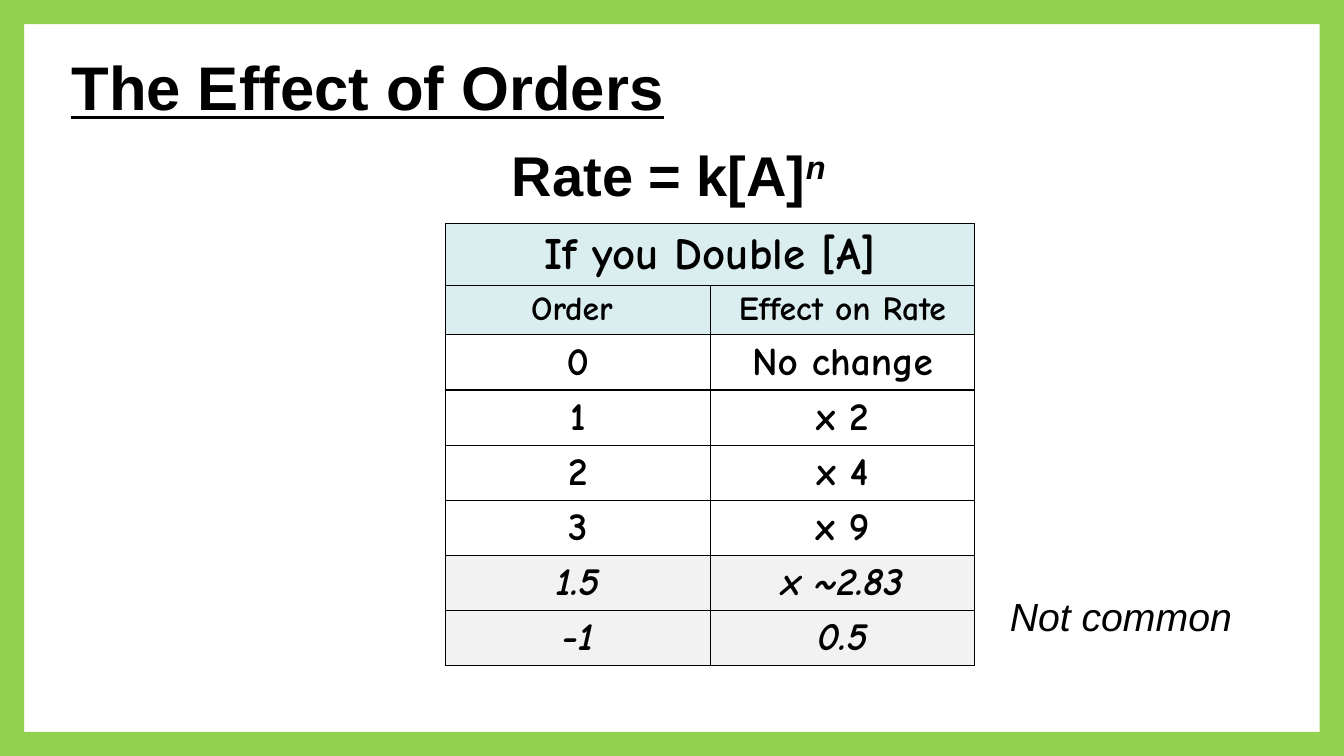
from dataclasses import dataclass

from lxml.etree import SubElement
from pptx import Presentation
from pptx.dml.color import RGBColor
from pptx.enum.shapes import MSO_SHAPE
from pptx.enum.text import MSO_ANCHOR, MSO_AUTO_SIZE, PP_ALIGN
from pptx.oxml.ns import qn
from pptx.util import Inches, Pt


@dataclass(frozen=True)
class Theme:
    ink: str = "000000"
    green: str = "92D050"
    aqua: str = "DAEDEF"
    gray: str = "F2F2F2"
    sans: str = "Arial"
    comic: str = "Comic Neue"
    title: int = 44
    rate: int = 40
    head: int = 32
    label: int = 24
    body: int = 28
    rule: int = 1


def write(para, text, size, face, color, bold=False, slant=False, under=False, raised=0):
    run = para.add_run()
    run.text = text
    font = run.font
    font.size, font.name = Pt(size), face
    font.bold, font.italic, font.underline = bold, slant, under
    font.color.rgb = RGBColor.from_string(color)
    if raised:
        run._r.get_or_add_rPr().set("baseline", str(raised * 1000))


class Board:
    def __init__(self, deck, theme):
        self.deck = deck
        self.theme = theme
        self.slide = deck.slides.add_slide(deck.slide_layouts[6])

    def across(self, share):
        return round(self.deck.slide_width * share / 100)

    def down(self, share):
        return round(self.deck.slide_height * share / 100)

    def place(self, left, top, width, height):
        return self.across(left), self.down(top), self.across(width), self.down(height)

    def frame(self, depth):
        shape = self.slide.shapes.add_shape(MSO_SHAPE.FRAME, *self.place(0, 0, 100, 100))
        shape.adjustments[0] = depth
        shape.shadow.inherit = False
        shape.fill.solid()
        shape.fill.fore_color.rgb = RGBColor.from_string(self.theme.green)
        shape.line.fill.background()

    def text(self, spot, parts, size, wrap=True, grow=True, anchor=MSO_ANCHOR.TOP):
        box = self.slide.shapes.add_textbox(*self.place(*spot)).text_frame
        box.word_wrap = wrap
        box.auto_size = MSO_AUTO_SIZE.SHAPE_TO_FIT_TEXT if grow else MSO_AUTO_SIZE.NONE
        box.vertical_anchor = anchor
        for words, style in parts:
            write(box.paragraphs[0], words, size=size, face=self.theme.sans,
                  color=self.theme.ink, **style)

    def border(self, cell):
        props = cell._tc.get_or_add_tcPr()
        for side in ("lnL", "lnR", "lnT", "lnB"):
            line = SubElement(props, qn(f"a:{side}"), w=str(Pt(self.theme.rule)))
            fill = SubElement(line, qn("a:solidFill"))
            SubElement(fill, qn("a:srgbClr"), val=self.theme.ink)

    def table(self, spot, rows):
        shape = self.slide.shapes.add_table(len(rows), 2, *self.place(*spot))
        grid = shape.table
        grid.first_row = grid.horz_banding = False
        grid.cell(0, 0).merge(grid.cell(0, 1))
        for index, (words, height, size, shade, slant) in enumerate(rows):
            grid.rows[index].height = self.down(height)
            for cell, word in zip(grid.rows[index].cells, words):
                self.border(cell)
                if shade:
                    cell.fill.solid()
                    cell.fill.fore_color.rgb = RGBColor.from_string(shade)
                else:
                    cell.fill.background()
                if word:
                    para = cell.text_frame.paragraphs[0]
                    para.alignment = PP_ALIGN.CENTER
                    write(para, word, size=size, face=self.theme.comic,
                          color=self.theme.ink, bold=True, slant=slant)


def main():
    theme = Theme()
    deck = Presentation()
    deck.slide_width, deck.slide_height = Inches(13.33), Inches(7.5)
    board = Board(deck, theme)

    board.text((4.58, 3.07, 63.75, 16.67),
               [("The Effect of Orders", {"bold": True, "under": True})],
               theme.title, grow=False, anchor=MSO_ANCHOR.MIDDLE)
    board.frame(0.032)

    common = [("0", "No change"), ("1", "x 2"), ("2", "x 4"), ("3", "x 9")]
    rare = [("1.5", "x ~2.83"), ("-1", "0.5")]
    rows = [
        (("If you Double [A]", ""), 8.13, theme.head, theme.aqua, False),
        (("Order ", "Effect on Rate"), 6.53, theme.label, theme.aqua, False),
        *((pair, 7.3, theme.body, None, False) for pair in common),
        *((pair, 7.3, theme.body, theme.gray, True) for pair in rare),
    ]
    board.table((33.15, 29.6, 39.38, 58.46), rows)

    board.text((37.35, 17.87, 25.35, 10.27),
               [("Rate = k[A]", {"bold": True}),
                ("n", {"bold": True, "slant": True, "raised": 30})],
               theme.rate, wrap=False)
    board.text((74.4, 77.73, 18.75, 7.6), [("Not common", {"slant": True})], theme.body)
    deck.save("out.pptx")


if __name__ == "__main__":
    main()
